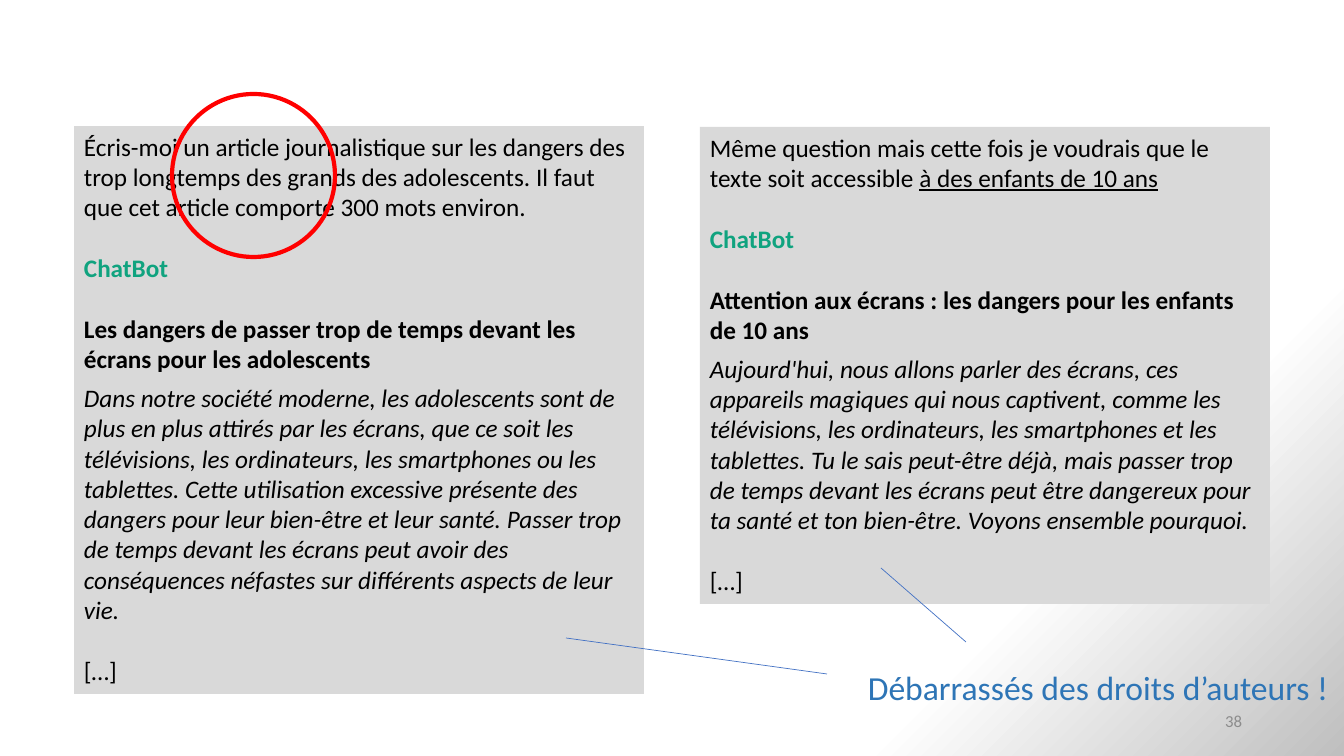
from dataclasses import dataclass

import lxml.etree
import pptx
import pptx.dml.color
import pptx.enum.shapes
import pptx.enum.text
import pptx.oxml.ns
import pptx.util

EMU_PER_PX = 914400 / 100.8
SHAPES = pptx.enum.shapes.MSO_SHAPE
ALIGN = pptx.enum.text.PP_ALIGN
ANCHOR = pptx.enum.text.MSO_ANCHOR
AUTO_SIZE = pptx.enum.text.MSO_AUTO_SIZE


@dataclass(frozen=True)
class Theme:
    font: str = "Calibri"
    text: str = "000000"
    panel: str = "D9D9D9"
    speaker: str = "10A37F"
    highlight: str = "FF0000"
    callout: str = "2E75B6"
    pointer: str = "4472C4"
    muted: str = "8C8C8C"
    paper: str = "FFFFFF"
    shade: str = "BFBFBF"
    body_size: int = 18
    callout_size: int = 24
    number_size: int = 12
    block_gap: int = 22
    heading_gap: int = 6


def px(length):
    return pptx.util.Emu(round(length * EMU_PER_PX))


def rgb(colour):
    return pptx.dml.color.RGBColor.from_string(colour)


class SlideBuilder:
    def __init__(self, presentation, theme):
        self.theme = theme
        self.slide = presentation.slides.add_slide(presentation.slide_layouts[6])

    def background(self):
        """Shade the bottom right corner with a circular gradient."""
        fill = self.slide.background.fill
        fill.gradient()
        stops = ((0.77, self.theme.paper), (1, self.theme.shade))
        for stop, (position, colour) in zip(fill.gradient_stops, stops):
            stop.position = position
            stop.color.rgb = rgb(colour)
        qn = pptx.oxml.ns.qn
        gradient = self.slide.element.find(".//" + qn("a:gradFill"))
        circle = lxml.etree.Element(qn("a:path"), path="circle")
        lxml.etree.SubElement(circle, qn("a:fillToRect"), l="0", t="0", r="100000", b="100000")
        gradient.replace(gradient.find(qn("a:lin")), circle)

    def run(self, paragraph, text, size, colour, bold=False, italic=False, underline=False):
        run = paragraph.add_run()
        run.text = text
        font = run.font
        font.name = self.theme.font
        font.size = pptx.util.Pt(size)
        font.color.rgb = rgb(colour)
        font.bold, font.italic, font.underline = bold, italic, underline

    def shape(self, kind, left, top, width, height):
        shape = self.slide.shapes.add_shape(kind, px(left), px(top), px(width), px(height))
        shape.shadow.inherit = False
        return shape

    def panel(self, left, top, width, height, question, title, article):
        theme = self.theme
        shape = self.shape(SHAPES.RECTANGLE, left, top, width, height)
        shape.fill.solid()
        shape.fill.fore_color.rgb = rgb(theme.panel)
        shape.line.fill.background()
        frame = shape.text_frame
        frame.word_wrap = True
        frame.auto_size = AUTO_SIZE.SHAPE_TO_FIT_TEXT
        frame.vertical_anchor = ANCHOR.TOP
        blocks = (
            (0, question),
            (theme.block_gap, [("ChatBot", {"bold": True, "colour": theme.speaker})]),
            (theme.block_gap, [(title, {"bold": True})]),
            (theme.heading_gap, [(article, {"italic": True})]),
            (theme.block_gap, [("[…]", {})]),
        )
        for index, (gap, runs) in enumerate(blocks):
            paragraph = frame.add_paragraph() if index else frame.paragraphs[0]
            paragraph.alignment = ALIGN.LEFT
            paragraph.space_before = pptx.util.Pt(gap)
            for text, style in runs:
                self.run(paragraph, text, theme.body_size, **{"colour": theme.text, **style})

    def ring(self, left, top, diameter):
        shape = self.shape(SHAPES.OVAL, left, top, diameter, diameter)
        shape.fill.background()
        shape.line.color.rgb = rgb(self.theme.highlight)
        shape.line.width = pptx.util.Pt(3)

    def label(self, left, top, width, height, text, size, colour,
              align=ALIGN.LEFT, anchor=ANCHOR.TOP, wrap=True):
        box = self.slide.shapes.add_textbox(px(left), px(top), px(width), px(height))
        frame = box.text_frame
        frame.word_wrap = wrap
        frame.vertical_anchor = anchor
        paragraph = frame.paragraphs[0]
        paragraph.alignment = align
        self.run(paragraph, text, size, colour)

    def pointer(self, start, end):
        line = self.slide.shapes.add_connector(
            pptx.enum.shapes.MSO_CONNECTOR.STRAIGHT, *map(px, (*start, *end)))
        line.line.color.rgb = rgb(self.theme.pointer)
        line.line.width = pptx.util.Pt(0.5)
        properties = line.element.find(pptx.oxml.ns.qn("p:spPr"))
        lxml.etree.SubElement(properties, pptx.oxml.ns.qn("a:effectLst"))


def main():
    presentation = pptx.Presentation()
    presentation.slide_width, presentation.slide_height = px(1344), px(756)
    theme = Theme()
    builder = SlideBuilder(presentation, theme)
    builder.background()
    builder.panel(
        74, 126, 570, 568,
        [("Écris-moi un article journalistique sur les dangers des trop longtemps des grands "
          "des adolescents. Il faut que cet article comporte 300 mots environ.", {})],
        "Les dangers de passer trop de temps devant les écrans pour les adolescents",
        "Dans notre société moderne, les adolescents sont de plus en plus attirés par les "
        "écrans, que ce soit les télévisions, les ordinateurs, les smartphones ou les "
        "tablettes. Cette utilisation excessive présente des dangers pour leur bien-être et "
        "leur santé. Passer trop de temps devant les écrans peut avoir des conséquences "
        "néfastes sur différents aspects de leur vie.")
    builder.panel(
        700, 127, 570, 477,
        [("Même question mais cette fois je voudrais que le texte soit accessible ", {}),
         ("à des enfants de 10 ans", {"underline": True})],
        "Attention aux écrans : les dangers pour les enfants de 10 ans",
        "Aujourd'hui, nous allons parler des écrans, ces appareils magiques qui nous captivent, "
        "comme les télévisions, les ordinateurs, les smartphones et les tablettes. Tu le sais "
        "peut-être déjà, mais passer trop de temps devant les écrans peut être dangereux pour "
        "ta santé et ton bien-être. Voyons ensemble pourquoi.")
    builder.ring(172, 94, 163)
    builder.label(858, 662, 486, 50, "Débarrassés des droits d’auteurs !",
                  theme.callout_size, theme.callout, wrap=False)
    builder.pointer((881, 568), (966, 642))
    builder.pointer((566, 638), (827, 674))
    builder.label(950, 701, 302, 40, "38", theme.number_size, theme.muted,
                  align=ALIGN.RIGHT, anchor=ANCHOR.MIDDLE)
    presentation.save("out.pptx")


if __name__ == "__main__":
    main()
